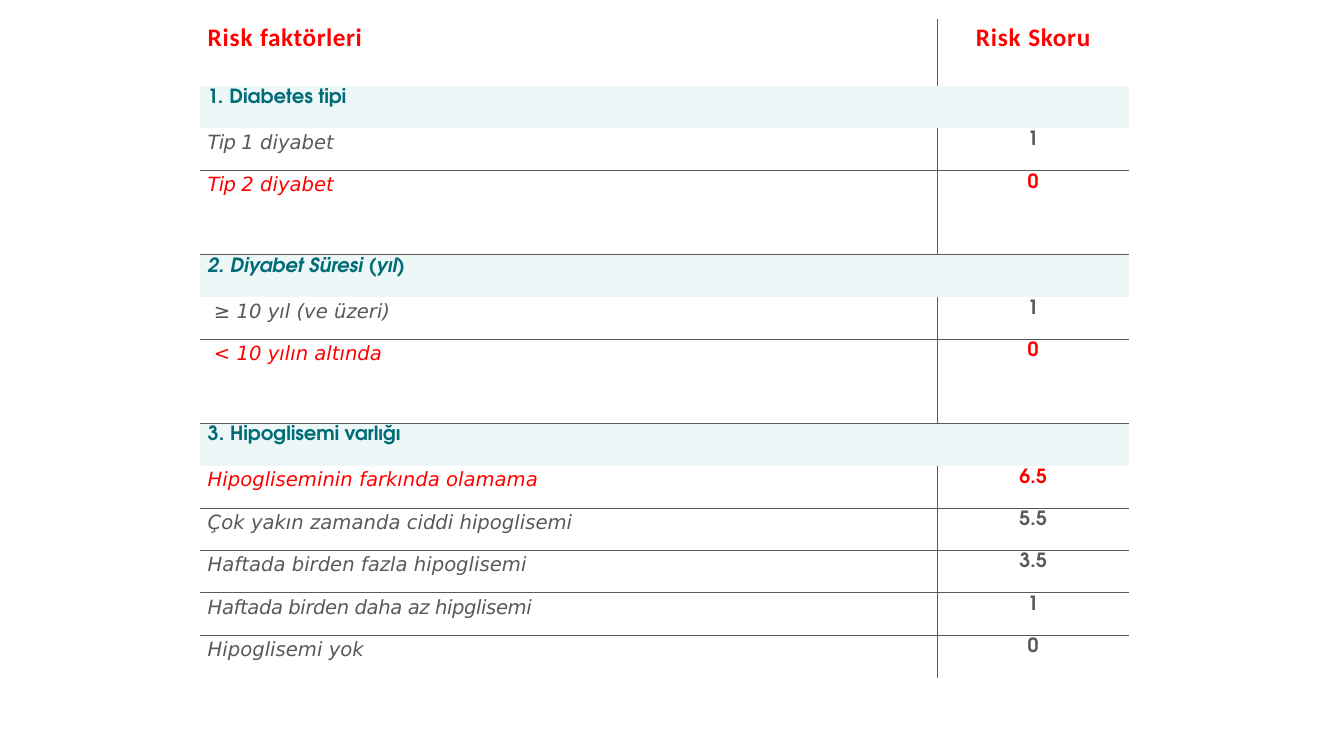
from dataclasses import dataclass

from lxml.etree import SubElement
from pptx import Presentation
from pptx.dml.color import RGBColor
from pptx.enum.text import MSO_ANCHOR, PP_ALIGN
from pptx.oxml.ns import qn
from pptx.util import Pt


@dataclass(frozen=True)
class Theme:
    red: str = "FF0000"
    teal: str = "006C76"
    grey: str = "58595B"
    band: str = "EDF7F8"
    header_font: str = "Calibri"
    section_font: str = "TeX Gyre Adventor"
    item_font: str = "DejaVu Sans"
    header_size: float = 18
    body_size: float = 14
    rule_width: float = 0.5
    plain_table: str = "{2D5ABB26-0587-4C30-8999-92F81FD0307C}"


THEME = Theme()
TABLE_LEFT, TABLE_TOP = 142.6, 13.7
COLUMN_WIDTHS = (527, 136.8)
HEADER_HEIGHT, ROW_HEIGHT, TALL_HEIGHT = 47.6, 30.3, 60
TEXT_INDENT = 5.76

# A span is (text, letter spacing in points).
HEADER = ([("Risk ", 0.6), ("faktörleri", 0.4)], [("Risk ", 0.6), ("Skoru", 0.5)])

# Each section: title spans, italic title, items of (spans, score, chosen).
SECTIONS = [
    ([("1. ", 0.1), ("Diabetes", 0), (" tipi", -0.1)], False, [
        ([("Tip ", -0.6), ("1 diyabet", 0)], "1", False),
        ([("Tip ", -0.6), ("2 diyabet", 0)], "0", True),
    ]),
    ([("2. ", 0.1), ("Diyabet Süresi", 0), (" (yıl)", -0.1)], True, [
        ([(" ", -0.8), ("≥ 10 yıl (ve üzeri)", 0)], "1", False),
        ([(" ", -0.8), ("< 10 yılın altında", 0)], "0", True),
    ]),
    ([("3. ", 0.1), ("Hipoglisemi varlığı", -0.1)], False, [
        ([("Hipogliseminin farkında olamama", 0)], "6.5", True),
        ([("Çok yakın zamanda ciddi hipoglisemi", 0)], "5.5", False),
        ([("Haftada birden fazla hipoglisemi", 0)], "3.5", False),
        ([("Haftada birden daha az hipglisemi", -0.3)], "1", False),
        ([("Hipoglisemi yok", 0)], "0", False),
    ]),
]


class SlideBuilder:
    def __init__(self, page, theme):
        self.page = page
        self.theme = theme

    def table(self, left, top, widths, heights):
        frame = self.page.shapes.add_table(
            len(heights), len(widths), Pt(left), Pt(top), Pt(sum(widths)), Pt(sum(heights)))
        table = frame.table
        table.first_row = table.horz_banding = False
        table._tbl.tblPr.find(qn("a:tableStyleId")).text = self.theme.plain_table
        for column, width in zip(table.columns, widths):
            column.width = Pt(width)
        for row, height in zip(table.rows, heights):
            row.height = Pt(height)
        return table

    def cell(self, cell, spans, look, centred=False, sides="", fill=None):
        layout = dict(margin_left=0, margin_top=Pt(2.16), margin_right=0,
                      margin_bottom=0, vertical_anchor=MSO_ANCHOR.TOP)
        for name, value in layout.items():
            setattr(cell, name, value)
        self.borders(cell, sides)
        if fill:
            cell.fill.solid()
            cell.fill.fore_color.rgb = RGBColor.from_string(fill)
        else:
            cell.fill.background()
        para = cell.text_frame.paragraphs[0]
        para.space_before = Pt(3.1)
        if centred:
            para.alignment = PP_ALIGN.CENTER
        else:
            para._p.get_or_add_pPr().set("marL", str(Pt(TEXT_INDENT)))
        for text, spacing in spans:
            self.span(para, text, spacing, look)

    def span(self, para, text, spacing, look):
        span = para.add_run()
        span.text = text
        for name, value in look.items():
            if name == "color":
                span.font.color.rgb = RGBColor.from_string(value)
            else:
                setattr(span.font, name, value)
        span._r.get_or_add_rPr().set("spc", str(round(spacing * 100)))

    def borders(self, cell, sides):
        """Rule the given sides, named by letters in the order L, R, T, B."""
        properties = cell._tc.get_or_add_tcPr()
        for side in sides:
            line = SubElement(properties, qn(f"a:ln{side}"), w=str(Pt(self.theme.rule_width)))
            SubElement(SubElement(line, qn("a:solidFill")), qn("a:srgbClr"), val=self.theme.grey)

    def header(self, table):
        look = dict(name=self.theme.header_font, size=Pt(self.theme.header_size),
                    bold=True, color=self.theme.red)
        factor, score = HEADER
        self.cell(table.cell(0, 0), factor, look, sides="R")
        self.cell(table.cell(0, 1), score, look, centred=True, sides="L")

    def section(self, table, row, title, italic):
        look = dict(name=self.theme.section_font, size=Pt(self.theme.body_size),
                    bold=True, italic=italic, color=self.theme.teal)
        table.cell(row, 0).merge(table.cell(row, 1))
        self.cell(table.cell(row, 0), title, look, fill=self.theme.band)

    def item(self, table, row, spans, score, chosen, rules):
        look = dict(name=self.theme.item_font, size=Pt(self.theme.body_size), bold=False,
                    italic=True, color=self.theme.red if chosen else self.theme.grey)
        score_look = look | dict(name=self.theme.section_font, bold=True, italic=False)
        spacing = 0.1 if "." in score else 0
        self.cell(table.cell(row, 0), spans, look, sides="R" + rules)
        self.cell(table.cell(row, 1), [(score, spacing)], score_look,
                  centred=True, sides="L" + rules)


def row_heights():
    """The last item of every section but the final one is tall."""
    heights = [HEADER_HEIGHT]
    for _, _, items in SECTIONS:
        heights += [ROW_HEIGHT] * len(items) + [TALL_HEIGHT]
    heights[-1] = ROW_HEIGHT
    return heights


def main():
    deck = Presentation()
    deck.slide_width, deck.slide_height = Pt(960), Pt(540)
    builder = SlideBuilder(deck.slides.add_slide(deck.slide_layouts[6]), THEME)
    heights = row_heights()
    table = builder.table(TABLE_LEFT, TABLE_TOP, COLUMN_WIDTHS, heights)
    builder.header(table)
    row = 1
    for title, italic, items in SECTIONS:
        builder.section(table, row, title, italic)
        for place, (spans, score, chosen) in enumerate(items):
            row += 1
            rules = ("T" if place else "") + ("B" if row < len(heights) - 1 else "")
            builder.item(table, row, spans, score, chosen, rules)
        row += 1
    deck.save("out.pptx")


if __name__ == "__main__":
    main()
